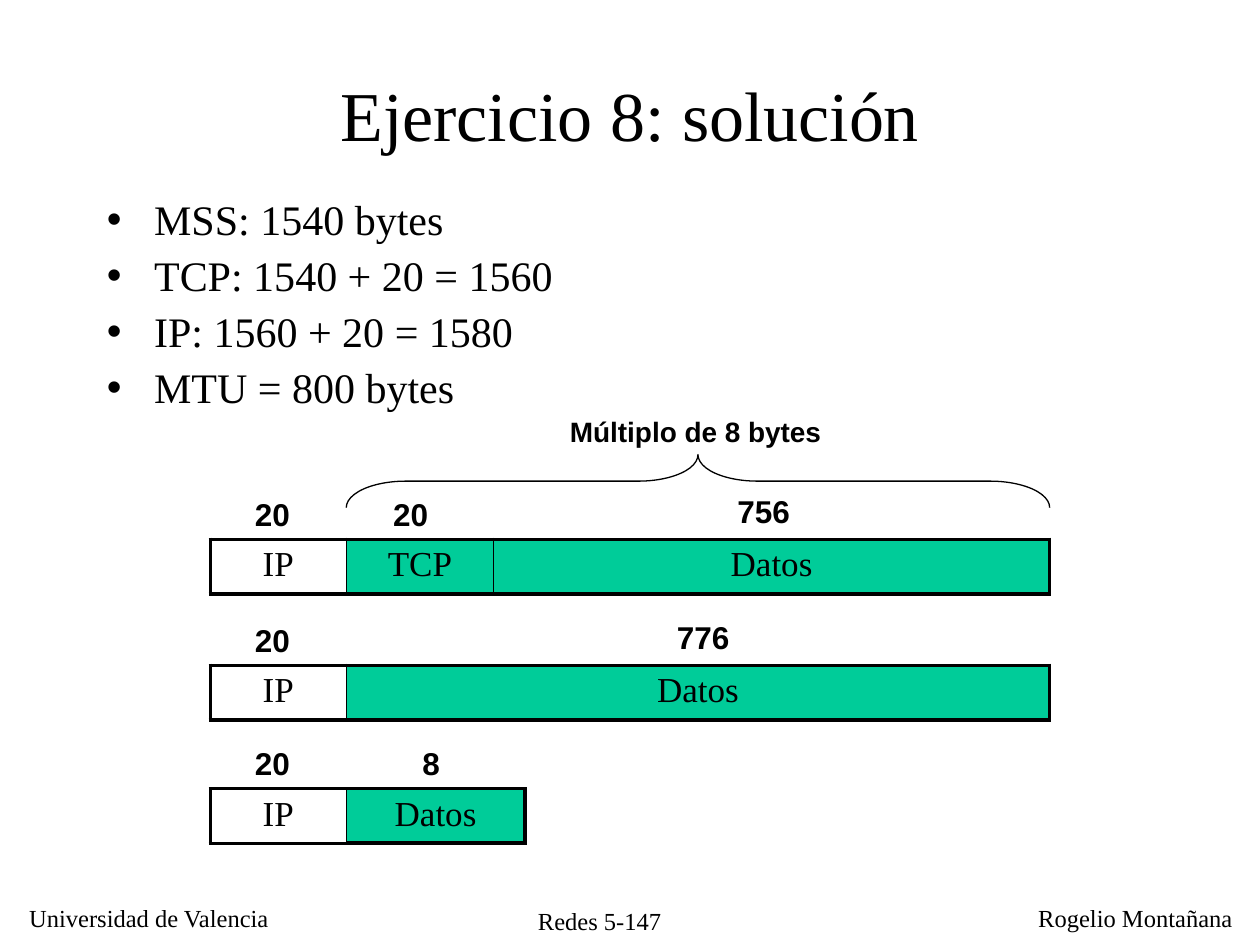
from dataclasses import dataclass

from lxml.etree import SubElement
from pptx import Presentation
from pptx.dml.color import RGBColor
from pptx.enum.shapes import MSO_SHAPE
from pptx.enum.text import MSO_ANCHOR, MSO_AUTO_SIZE, PP_ALIGN
from pptx.oxml.ns import qn
from pptx.util import Cm, Pt


@dataclass(frozen=True)
class Theme:
    """Colours, fonts and type sizes of the slide."""

    ink: str = "000000"
    payload: str = "00CC99"
    serif: str = "Times New Roman"
    sans: str = "Arial"
    title: int = 40
    body: int = 24
    cell: int = 20
    size_label: int = 18
    note: int = 16
    footer: int = 14
    thin: float = 0.75
    inner: float = 1
    outer: float = 2.25


@dataclass(frozen=True)
class Field:
    """One field of a packet, with its length label and the label's place."""

    name: str
    width: float
    length: str
    label_left: float
    label_width: float
    label_rise: float = 1.02


THEME = Theme()
PACKET_LEFT = 4.24
PACKET_HEIGHT = 1.09
PAYLOAD_HEIGHT = 1.07
HEADER = Field("IP", 2.74, "20", 4.88, 1.22)
PAYLOAD_LEFT = PACKET_LEFT + HEADER.width
FULL_PAYLOAD = 14.18
TCP_WIDTH = 2.97
PACKETS = [
    (10.87, [HEADER, Field("TCP", TCP_WIDTH, "20", 7.67, 1.22),
             Field("Datos", FULL_PAYLOAD - TCP_WIDTH, "756", 14.61, 1.57, 1.07)]),
    (13.41, [HEADER, Field("Datos", FULL_PAYLOAD, "776", 13.39, 1.57, 1.07)]),
    (15.9, [HEADER, Field("Datos", 3.6, "8", 8.26, 0.86)]),
]
BULLETS = ["MSS: 1540 bytes", "TCP: 1540 + 20 = 1560", "IP: 1560 + 20 = 1580", "MTU = 800 bytes"]
FOOTERS = [
    ("Universidad de Valencia", 0.3, 18.08, 5.41),
    ("Redes 5-147", 10.49, 18.14, 3.2),
    ("Rogelio Montañana", 20.68, 18.08, 4.42),
]


def add_run(paragraph, text, size, font=THEME.serif, bold=False):
    """Append one formatted run to a paragraph."""
    run = paragraph.add_run()
    run.text = text
    run.font.name = font
    run.font.size = Pt(size)
    run.font.bold = bold
    run.font.color.rgb = RGBColor.from_string(THEME.ink)


def place(shape, left, top, width, height):
    """Move and size a shape in centimetres."""
    shape.left, shape.top = Cm(left), Cm(top)
    shape.width, shape.height = Cm(width), Cm(height)


def add_label(slide, text, left, top, width, height, size, font=THEME.sans, bold=True):
    """Add a one-line text box."""
    box = slide.shapes.add_textbox(Cm(left), Cm(top), Cm(width), Cm(height))
    box.text_frame.word_wrap = False
    paragraph = box.text_frame.paragraphs[0]
    paragraph.alignment = PP_ALIGN.CENTER
    add_run(paragraph, text, size, font, bold)


def add_outline(slide, kind, left, top, width, height):
    """Add a preset shape with a thin line, no fill and no shadow."""
    shape = slide.shapes.add_shape(kind, Cm(left), Cm(top), Cm(width), Cm(height))
    shape.shadow.inherit = False
    shape.fill.background()
    shape.line.color.rgb = RGBColor.from_string(THEME.ink)
    shape.line.width = Pt(THEME.thin)
    return shape


def set_borders(cell, left, right):
    """Draw the four borders of a cell, heavy at top and bottom."""
    properties = cell._tc.get_or_add_tcPr()
    widths = {"a:lnL": left, "a:lnR": right, "a:lnT": THEME.outer, "a:lnB": THEME.outer}
    for tag, width in widths.items():
        line = SubElement(properties, qn(tag), w=str(Pt(width)))
        fill = SubElement(line, qn("a:solidFill"))
        SubElement(fill, qn("a:srgbClr"), val=THEME.ink)


def add_packet(slide, top, fields):
    """Add a packet: payload block, table of fields and length labels."""
    payload_width = sum(field.width for field in fields[1:])
    block = add_outline(slide, MSO_SHAPE.RECTANGLE, PAYLOAD_LEFT, top, payload_width, PAYLOAD_HEIGHT)
    block.fill.solid()
    block.fill.fore_color.rgb = RGBColor.from_string(THEME.payload)

    frame = slide.shapes.add_table(1, len(fields), Cm(PACKET_LEFT), Cm(top),
                                   Cm(HEADER.width + payload_width), Cm(PACKET_HEIGHT))
    table = frame.table
    table.first_row = table.horz_banding = False
    last = len(fields) - 1
    for index, field in enumerate(fields):
        table.columns[index].width = Cm(field.width)
        cell = table.cell(0, index)
        set_borders(cell, THEME.inner if index else THEME.outer,
                    THEME.outer if index == last else THEME.inner)
        cell.fill.background()
        paragraph = cell.text_frame.paragraphs[0]
        paragraph.alignment = PP_ALIGN.CENTER
        add_run(paragraph, field.name, THEME.cell)
        add_label(slide, field.length, field.label_left, top - field.label_rise,
                  field.label_width, 1.02, THEME.size_label)


def add_brace(slide):
    """Add the brace that spans the payload, with its note."""
    thickness, middle = 1.07, 9.7
    brace = add_outline(slide, MSO_SHAPE.LEFT_BRACE, PAYLOAD_LEFT + (FULL_PAYLOAD - thickness) / 2,
                        middle - FULL_PAYLOAD / 2, thickness, FULL_PAYLOAD)
    brace.rotation = 90
    brace.adjustments[0] = 1.12
    add_label(slide, "Múltiplo de 8 bytes", 11.23, 8.23, 5.59, 0.94, THEME.note)


def fill_title(slide):
    """Place and fill the title."""
    title = slide.shapes.title
    place(title, 1.9, 1.12, 21.6, 2.34)
    title.text_frame.vertical_anchor = MSO_ANCHOR.MIDDLE
    paragraph = title.text_frame.paragraphs[0]
    paragraph.alignment = PP_ALIGN.CENTER
    add_run(paragraph, "Ejercicio 8: solución", THEME.title)


def fill_body(slide):
    """Place and fill the bulleted list."""
    body = slide.placeholders[1]
    place(body, 1.9, 3.89, 21.6, 4.88)
    frame = body.text_frame
    frame.auto_size = MSO_AUTO_SIZE.NONE
    for index, text in enumerate(BULLETS):
        paragraph = frame.add_paragraph() if index else frame.paragraphs[0]
        paragraph.line_spacing = 0.9
        paragraph.space_before = Pt(6)
        add_run(paragraph, text, THEME.body)


def main():
    """Build and save the slide."""
    presentation = Presentation()
    presentation.slide_width, presentation.slide_height = Cm(25.4), Cm(19.05)
    slide = presentation.slides.add_slide(presentation.slide_layouts[1])
    for text, left, top, width in FOOTERS:
        add_label(slide, text, left, top, width, 0.84, THEME.footer, THEME.serif, False)
    fill_title(slide)
    fill_body(slide)
    for top, fields in PACKETS:
        add_packet(slide, top, fields)
    add_brace(slide)
    presentation.save("out.pptx")


if __name__ == "__main__":
    main()
